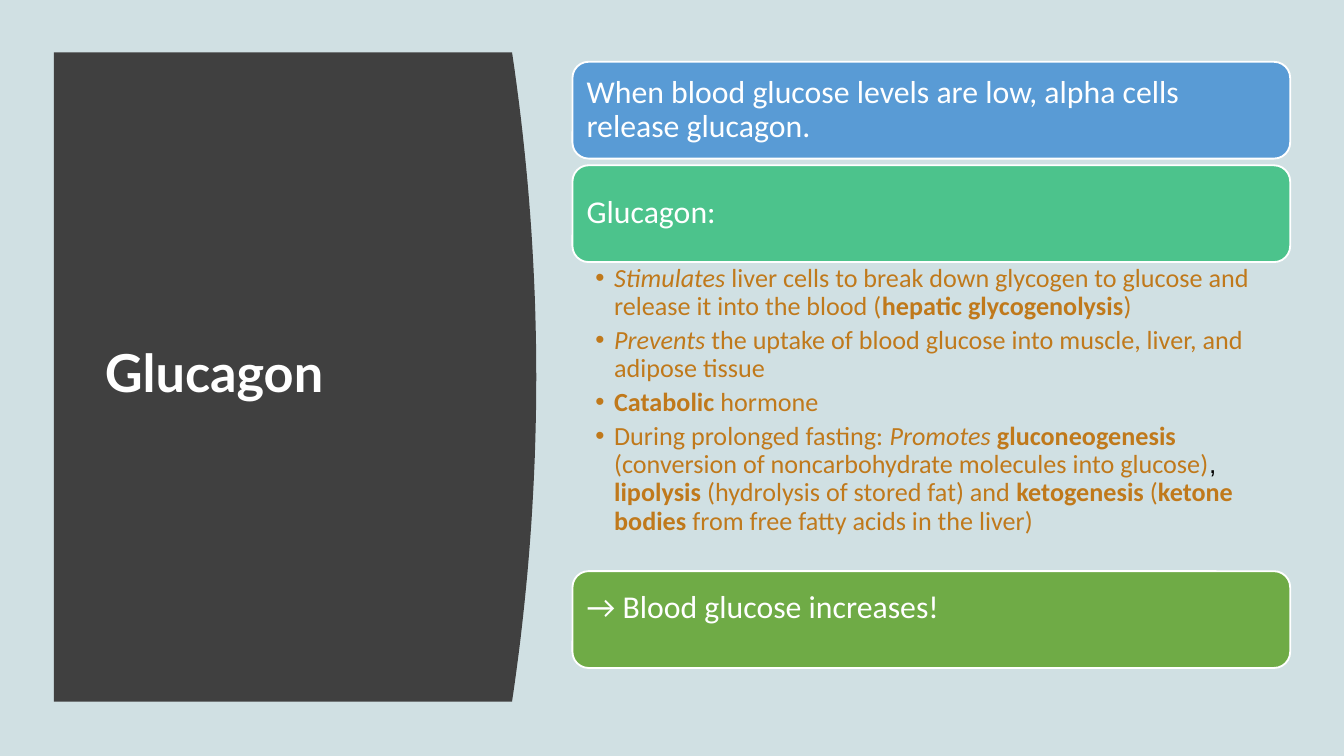
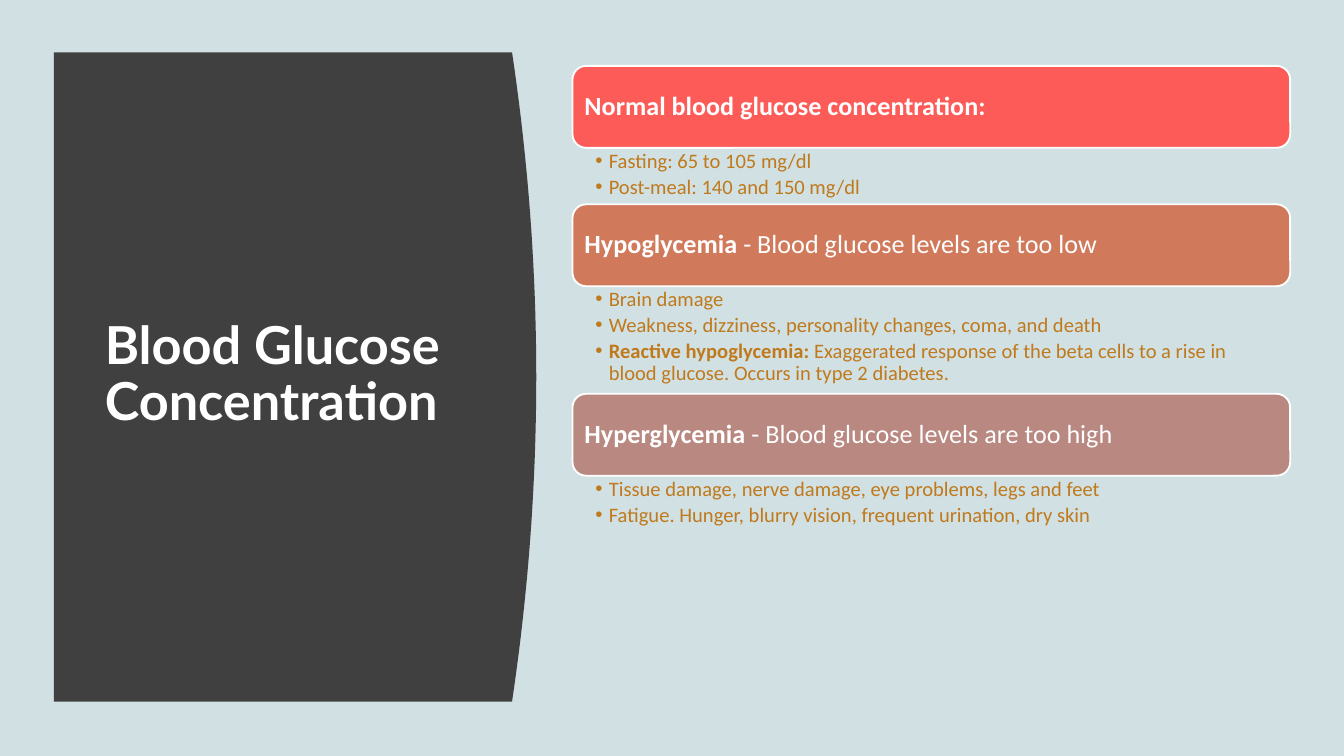
"""Build two slides on glucagon and blood glucose concentration."""
import pptx
import pptx.dml.color
import pptx.enum.shapes
import pptx.enum.text
import pptx.oxml.ns
import pptx.util
from lxml import etree

RGBColor = pptx.dml.color.RGBColor
Inches = pptx.util.Inches
Pt = pptx.util.Pt
ANCHOR = pptx.enum.text.MSO_ANCHOR
ALIGN = pptx.enum.text.PP_ALIGN

BACKGROUND = RGBColor(0xD0, 0xE0, 0xE3)
PANEL = RGBColor(0x40, 0x40, 0x40)
WHITE = RGBColor(0xFF, 0xFF, 0xFF)
BLACK = RGBColor(0x00, 0x00, 0x00)
OCHRE = RGBColor(0xC0, 0x79, 0x1B)
BLUE = RGBColor(0x59, 0x9B, 0xD5)
TEAL = RGBColor(0x4C, 0xC3, 0x8C)
GREEN = RGBColor(0x6F, 0xAB, 0x46)
RED = RGBColor(0xFD, 0x5B, 0x58)
TERRACOTTA = RGBColor(0xD0, 0x7A, 0x5B)
ROSE = RGBColor(0xB8, 0x88, 0x81)

TITLE_FONT, BODY_FONT, PLAIN_FONT = "Lato", "Calibri", "Arial"
BOLD, ITALIC, PLAIN = "bold", "italic", "plain"

SLIDE_WIDTH = 10
SLIDE_HEIGHT = SLIDE_WIDTH * 9 / 16
PANEL_LEFT, PANEL_TOP, PANEL_BOTTOM = 0.4, 0.39, 5.22
PANEL_EDGE, PANEL_BULGE, PANEL_STEPS = 3.81, 0.18, 40
COLUMN_LEFT, COLUMN_WIDTH = 4.26, 5.34

SLIDES = [
    {
        "title": "Glucagon",
        "top": 0.46, "band_height": 0.72, "gap": 0.05,
        "band_size": 17, "band_margin": 0.07,
        "list_size": 14, "list_right": 0.13, "indent": 0.14, "space": 3,
        "sections": [
            {"color": BLUE, "heading": [
                ("When blood glucose levels are low, alpha cells release glucagon.",)]},
            {"color": TEAL, "heading": [("Glucagon:",)], "list_height": 2.3, "items": [
                [("Stimulates", ITALIC),
                 (" liver cells to break down glycogen to glucose and release it into the blood (",),
                 ("hepatic glycogenolysis", BOLD), (")",)],
                [("Prevents", ITALIC),
                 (" the uptake of blood glucose into muscle, liver, and adipose tissue",)],
                [("Catabolic", BOLD), (" hormone",)],
                [("During prolonged fasting: ",), ("Promotes ", ITALIC),
                 ("gluconeogenesis ", BOLD),
                 ("(conversion of noncarbohydrate molecules into glucose)",),
                 (", ", PLAIN), ("lipolysis ", BOLD),
                 ("(hydrolysis of stored fat) and ",), ("ketogenesis", BOLD), (" (",),
                 ("ketone bodies ", BOLD), ("from free fatty acids in the liver)",)],
            ]},
            {"color": GREEN, "heading": [("→ Blood glucose increases!",)], "lift": 0.17},
        ],
    },
    {
        "title": "Blood Glucose Concentration",
        "top": 0.49, "band_height": 0.61, "gap": 0,
        "band_size": 14, "band_margin": 0.06,
        "list_size": 11, "list_right": 0.1, "indent": 0.1, "space": 2,
        "sections": [
            {"color": RED, "heading": [("Normal blood glucose concentration:", BOLD)],
             "list_height": 0.42, "items": [
                 [("Fasting: 65 to 105 mg/dl",)],
                 [("Post-meal: 140 and 150 mg/dl",)]]},
            {"color": TERRACOTTA, "heading": [
                ("Hypoglycemia", BOLD), (" - Blood glucose levels are too low",)],
             "list_height": 0.8, "items": [
                 [("Brain damage",)],
                 [("Weakness, dizziness, personality changes, coma, and death",)],
                 [("Reactive hypoglycemia: ", BOLD),
                  ("Exaggerated response of the beta cells to a rise in blood glucose. "
                   "Occurs in type 2 diabetes.",)]]},
            {"color": ROSE, "heading": [
                ("Hyperglycemia", BOLD), (" - Blood glucose levels are too high",)],
             "list_height": 0.42, "items": [
                 [("Tissue damage, nerve damage, eye problems, legs and feet",)],
                 [("Fatigue. Hunger, blurry vision, frequent urination, dry skin",)]]},
        ],
    },
]


def set_frame(frame, margins, anchor):
    frame.word_wrap = True
    frame.auto_size = pptx.enum.text.MSO_AUTO_SIZE.NONE
    frame.vertical_anchor = anchor
    (frame.margin_left, frame.margin_top,
     frame.margin_right, frame.margin_bottom) = map(Inches, margins)


def format_font(font, name, size, color, bold=False, italic=False):
    font.name, font.size, font.bold, font.italic = name, Pt(size), bold, italic
    font.color.rgb = color


def fill_paragraph(paragraph, pieces, size, color):
    paragraph.alignment = ALIGN.LEFT
    paragraph.line_spacing = 0.9
    for text, *styles in pieces:
        run = paragraph.add_run()
        run.text = text
        plain = PLAIN in styles
        format_font(run.font, PLAIN_FONT if plain else BODY_FONT, size,
                    BLACK if plain else color, BOLD in styles, ITALIC in styles)


def set_bullet(paragraph, indent):
    properties = paragraph._p.get_or_add_pPr()
    properties.set("marL", str(Inches(indent)))
    properties.set("indent", str(-Inches(indent)))
    qualified = pptx.oxml.ns.qn
    color = etree.SubElement(properties, qualified("a:buClr"))
    etree.SubElement(color, qualified("a:srgbClr"), val=str(OCHRE))
    etree.SubElement(properties, qualified("a:buFont"), typeface=PLAIN_FONT)
    etree.SubElement(properties, qualified("a:buChar"), char="•")


def add_panel(slide):
    middle = (PANEL_TOP + PANEL_BOTTOM) / 2
    points = []
    for step in range(PANEL_STEPS + 1):
        y = PANEL_TOP + (PANEL_BOTTOM - PANEL_TOP) * step / PANEL_STEPS
        share = (y - middle) / (PANEL_BOTTOM - middle)
        points.append((Inches(PANEL_EDGE + PANEL_BULGE * (1 - share ** 2)), Inches(y)))
    points.append((Inches(PANEL_LEFT), Inches(PANEL_BOTTOM)))
    builder = slide.shapes.build_freeform(Inches(PANEL_LEFT), Inches(PANEL_TOP))
    builder.add_line_segments(points, close=True)
    panel = builder.convert_to_shape()
    panel.shadow.inherit = False
    panel.fill.solid()
    panel.fill.fore_color.rgb = PANEL
    panel.line.fill.background()
    slide.shapes.title.element.addprevious(panel.element)


def set_title(slide, text):
    title = slide.shapes.title
    title.left, title.top, title.width, title.height = map(Inches, (0.71, 0.83, 2.8, 3.93))
    set_frame(title.text_frame, (0.07, 0.04, 0.07, 0.04), ANCHOR.MIDDLE)
    title.text_frame.text = text
    paragraph = title.text_frame.paragraphs[0]
    paragraph.alignment = ALIGN.LEFT
    paragraph.line_spacing = 0.9
    format_font(paragraph.runs[0].font, TITLE_FONT, 28, WHITE, bold=True)


def add_band(slide, section, content, top):
    band = slide.shapes.add_shape(
        pptx.enum.shapes.MSO_SHAPE.ROUNDED_RECTANGLE,
        *map(Inches, (COLUMN_LEFT, top, COLUMN_WIDTH, content["band_height"])))
    band.shadow.inherit = False
    band.fill.solid()
    band.fill.fore_color.rgb = section["color"]
    band.line.color.rgb = WHITE
    band.line.width = Pt(1)
    margin = content["band_margin"]
    set_frame(band.text_frame,
              (margin, margin, margin, margin + section.get("lift", 0)), ANCHOR.MIDDLE)
    fill_paragraph(band.text_frame.paragraphs[0], section["heading"],
                   content["band_size"], WHITE)


def add_list(slide, section, content, top):
    box = slide.shapes.add_textbox(
        *map(Inches, (COLUMN_LEFT, top, COLUMN_WIDTH, section["list_height"])))
    frame = box.text_frame
    set_frame(frame, (0.17, 0.02, content["list_right"], 0.02), ANCHOR.TOP)
    for index, pieces in enumerate(section["items"]):
        paragraph = frame.add_paragraph() if index else frame.paragraphs[0]
        paragraph.level = 1
        paragraph.space_before = Pt(content["space"] if index else 0)
        fill_paragraph(paragraph, pieces, content["list_size"], OCHRE)
        set_bullet(paragraph, content["indent"])


def build_slide(presentation, content):
    slide = presentation.slides.add_slide(presentation.slide_layouts.get_by_name("Title Only"))
    set_title(slide, content["title"])
    add_panel(slide)
    top = content["top"]
    for section in content["sections"]:
        add_band(slide, section, content, top)
        top += content["band_height"]
        if "items" in section:
            add_list(slide, section, content, top)
            top += section["list_height"]
        else:
            top += content["gap"]


def main():
    presentation = pptx.Presentation()
    presentation.slide_width = Inches(SLIDE_WIDTH)
    presentation.slide_height = Inches(SLIDE_HEIGHT)
    background = presentation.slide_master.background.fill
    background.solid()
    background.fore_color.rgb = BACKGROUND
    for content in SLIDES:
        build_slide(presentation, content)
    presentation.save("out.pptx")


if __name__ == "__main__":
    main()
